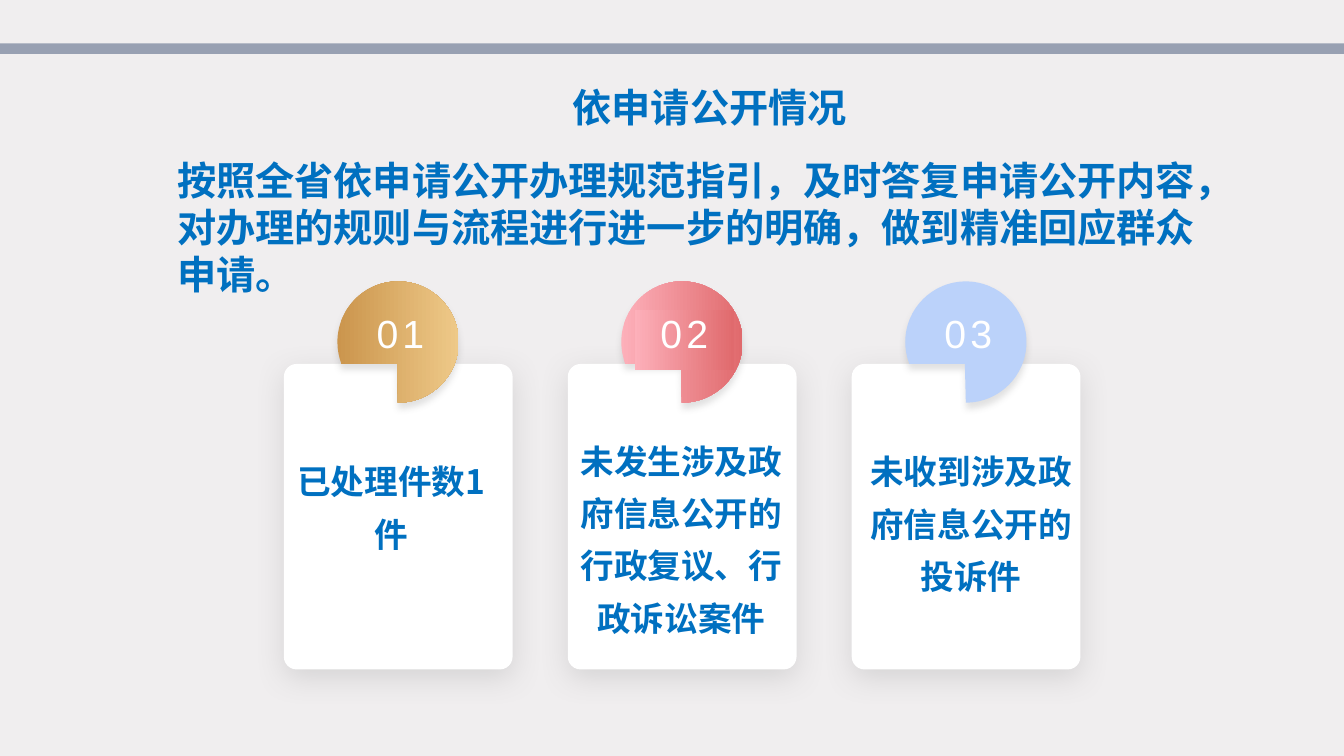
from math import asin, cos, pi, sin, tan
from lxml.etree import SubElement
from pptx import Presentation
from pptx.dml.color import RGBColor
from pptx.enum.shapes import MSO_SHAPE
from pptx.enum.text import MSO_ANCHOR, PP_ALIGN
from pptx.oxml.ns import qn
from pptx.util import Pt

# Content
TITLE = "依申请公开情况"
INTRO = ("按照全省依申请公开办理规范指引，及时答复申请公开内容，"
         "对办理的规则与流程进行进一步的明确，做到精准回应群众申请。")
# number, text, text box (offset from card, top, width, height), badge colours, number box filled
CARDS = [
    ("01", "已处理件数1件", (0, 338, 153.4, 40.3), ("CB954D", "EEC988"), False),
    ("02", "未发生涉及政府信息公开的行政复议、行政诉讼案件",
     (-1.1, 338, 164.2, 85.7), ("FDB0BA", "E06A6D"), True),
    ("03", "未收到涉及政府信息公开的投诉件", (0, 323, 170.6, 93.6), ("BBD2FA",), False),
]

THEME = {
    "back": "F0EEEF", "bar": "98A0B2", "text": "0070C0", "card": "FFFFFF",
    "num": "FFFFFF", "shade": "6C6C6C", "cjk": "Noto Sans CJK SC",
    "latin": "Arial", "big": 28, "body": 24,
}

# Layout, in points
LEFT, PITCH, TOP, WIDE, HIGH = 202.8, 202.8, 260, 163.4, 218.2
RADIUS, MID_X, MID_Y = 43.3, 81.5, 244.3

deck = Presentation()
deck.slide_width, deck.slide_height = Pt(960), Pt(540)
slide = deck.slides.add_slide(deck.slide_layouts[6])
slide.background.fill.solid()
slide.background.fill.fore_color.rgb = RGBColor.from_string(THEME["back"])


def paint(shape, tones):
    """One tone gives a flat fill, two a left-to-right gradient."""
    shape.shadow.inherit = False
    shape.line.fill.background()
    if len(tones) == 1:
        shape.fill.solid()
        shape.fill.fore_color.rgb = RGBColor.from_string(tones[0])
        return
    shape.fill.gradient()
    shape.fill.gradient_angle = 0
    for stop, tone in zip(shape.fill.gradient_stops, tones):
        stop.color.rgb = RGBColor.from_string(tone)


def shade(shape, blur, dist):
    effect = shape.element.spPr.find(qn("a:effectLst"))
    outer = SubElement(effect, qn("a:outerShdw"), blurRad=str(Pt(blur)), dist=str(Pt(dist)),
                       dir="5400000", algn="t", rotWithShape="0")
    tone = SubElement(outer, qn("a:srgbClr"), val=THEME["shade"])
    SubElement(tone, qn("a:alpha"), val="20000")


def block(kind, x, y, w, h, tones):
    shape = slide.shapes.add_shape(kind, Pt(x), Pt(y), Pt(w), Pt(h))
    paint(shape, tones)
    return shape


def label(x, y, w, h):
    return slide.shapes.add_textbox(Pt(x), Pt(y), Pt(w), Pt(h))


def write(shape, text, size, align=PP_ALIGN.CENTER, anchor=MSO_ANCHOR.TOP, space=None):
    frame = shape.text_frame
    frame.word_wrap = True
    frame.vertical_anchor = anchor
    para = frame.paragraphs[0]
    para.alignment = align
    para.line_spacing = space
    run = para.add_run()
    run.text = text
    font = run.font
    font.size, font.bold, font.name = Pt(size), True, THEME["cjk"]
    font.color.rgb = RGBColor.from_string(THEME["text"])
    SubElement(run._r.rPr, qn("a:ea"), typeface=THEME["cjk"])
    return frame, run


def number(shape, text):
    frame, run = write(shape, text, THEME["big"])
    frame.margin_left = frame.margin_right = frame.margin_top = frame.margin_bottom = 0
    run.font.name, run.font.bold = THEME["latin"], False
    run.font.color.rgb = RGBColor.from_string(THEME["num"])
    run._r.rPr.set("spc", "300")


def arc(x, a, b):
    """Two control points and the end of a curve from angle a to b."""
    k = 4 / 3 * tan((b - a) / 4)
    spots = [(cos(a) - k * sin(a), sin(a) + k * cos(a)),
             (cos(b) + k * sin(b), sin(b) - k * cos(b)), (cos(b), sin(b))]
    return [(Pt(x + RADIUS * u), Pt(MID_Y + RADIUS * v)) for u, v in spots]


def badge(x, tones):
    """Disc whose lower left part is cut off along the card's top edge."""
    cut = pi - asin((TOP - MID_Y) / RADIUS)
    notch = [(Pt(x - 0.7), Pt(TOP)), (Pt(x + RADIUS * cos(cut)), Pt(TOP))]
    dots = (arc(x, -pi / 2, 0) + arc(x, 0, pi / 2) + notch
            + arc(x, cut, pi) + arc(x, pi, 1.5 * pi))
    outline = slide.shapes.build_freeform(Pt(x), Pt(MID_Y - RADIUS))
    outline.add_line_segments(dots, close=True)
    shape = outline.convert_to_shape()
    # Join each three points of an arc into one curve
    steps = list(shape.element.iter(qn("a:lnTo")))
    for i in (0, 3, 8, 11):
        curve, *rest = steps[i:i + 3]
        curve.tag = qn("a:cubicBezTo")
        for step in rest:
            curve.append(step[0])
            step.getparent().remove(step)
    paint(shape, tones)
    shade(shape, 5, 4)


# Top bar and introduction
block(MSO_SHAPE.RECTANGLE, 0, 31, 960, 7.5, (THEME["bar"],))
write(label(119.5, 108, 766.8, 108.7), INTRO, THEME["big"], PP_ALIGN.LEFT)

# Cards
for i, (num, text, (dx, y, w, h), tones, filled) in enumerate(CARDS):
    x = LEFT + i * PITCH
    card = block(MSO_SHAPE.ROUNDED_RECTANGLE, x, TOP, WIDE, HIGH, (THEME["card"],))
    card.adjustments[0] = 0.056
    shade(card, 21, 6)
    badge(x + MID_X, tones)
    write(label(x + dx, y, w, h), text, THEME["body"], anchor=MSO_ANCHOR.MIDDLE, space=1.3)
    spot = (x + 47.9, 221.2, 70.6, 43.2)
    number(block(MSO_SHAPE.RECTANGLE, *spot, tones) if filled else label(*spot), num)

# Title
write(label(266.8, 56.2, 480.2, 41), TITLE, THEME["big"])

deck.save("out.pptx")
